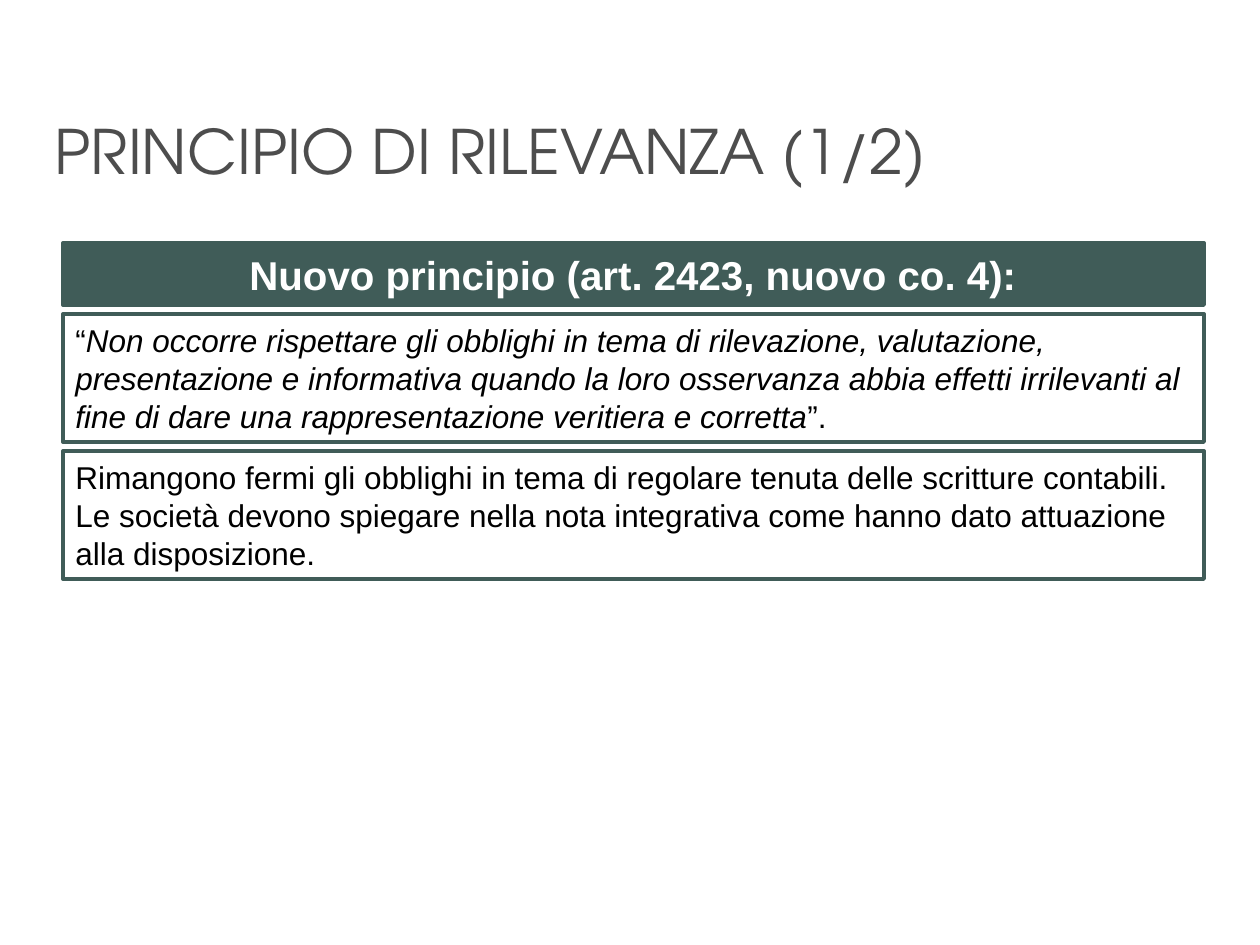
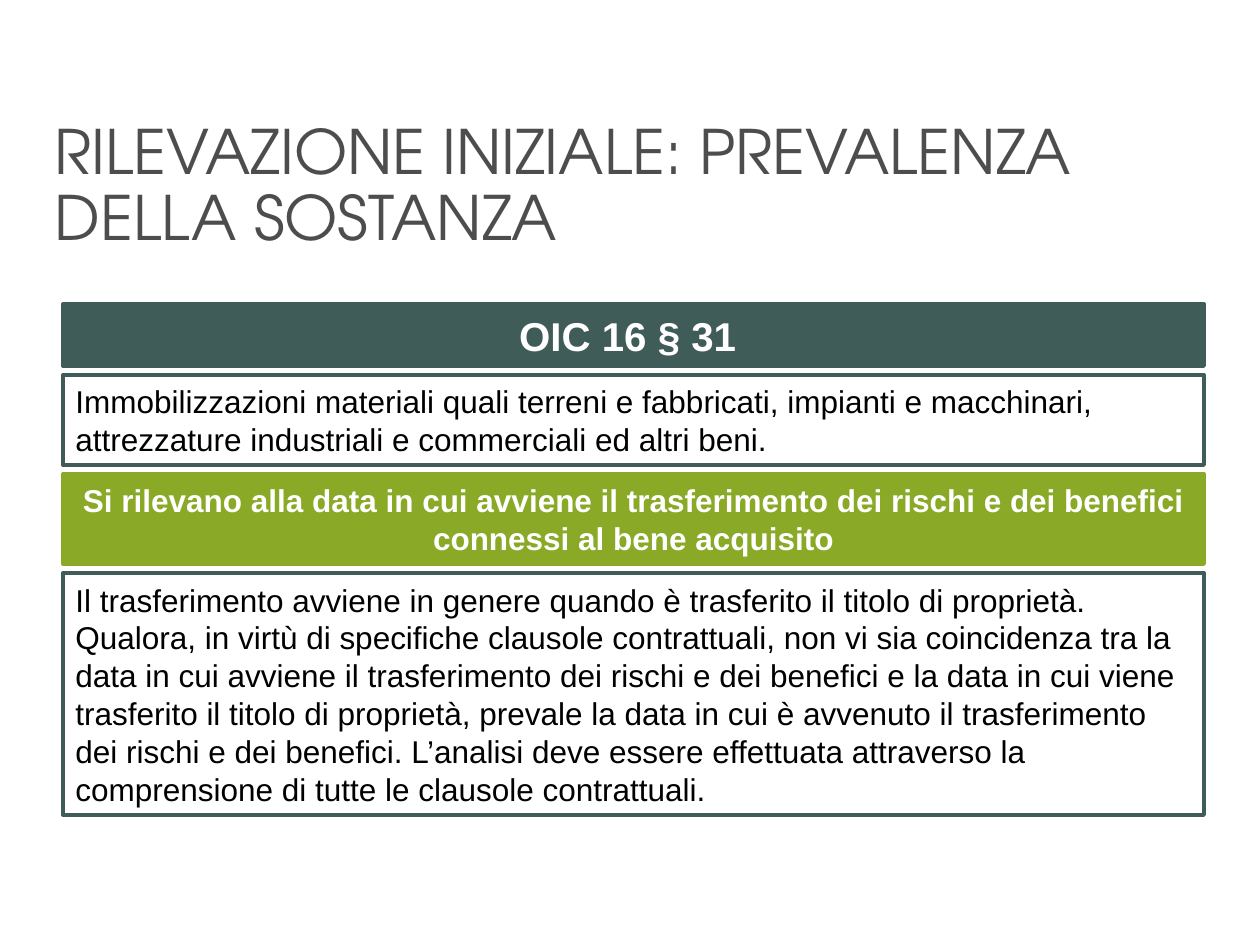
"""Build two slides on accounting principles with stacked text boxes."""
import pptx
import pptx.dml.color
import pptx.enum.shapes
import pptx.enum.text
import pptx.util

RGBColor = pptx.dml.color.RGBColor
TEAL = RGBColor(0x40, 0x5C, 0x58)
GREEN = RGBColor(0x89, 0xA9, 0x27)
GREY = RGBColor(0x4D, 0x4D, 0x4D)
WHITE = RGBColor(0xFF, 0xFF, 0xFF)
BLACK = RGBColor(0x00, 0x00, 0x00)

EMU_PER_PX = 914400 // 126
LEFT, WIDTH, GAP = 63, 1141, 9
PADDING, LINE_HEIGHT = 14, 38
TITLE_LAYOUT = 5


def px(length):
    return pptx.util.Emu(length * EMU_PER_PX)


class SlideBuilder:
    title_font = "TeX Gyre Adventor"
    body_font = "Arial"

    def __init__(self, deck):
        self.deck = deck
        self.page = None
        self.top = 0

    def set_font(self, para, name, size, color, bold=False):
        para.font.name = name
        para.font.size = pptx.util.Pt(size)
        para.font.color.rgb = color
        para.font.bold = bold

    def start(self, title, top):
        self.page = self.deck.slides.add_slide(self.deck.slide_layouts[TITLE_LAYOUT])
        self.top = top
        box = self.page.shapes.title
        box.left, box.top, box.width, box.height = px(42), px(115), px(1187), px(227)
        frame = box.text_frame
        frame.text = title
        frame.word_wrap = True
        frame.auto_size = pptx.enum.text.MSO_AUTO_SIZE.NONE
        frame.vertical_anchor = pptx.enum.text.MSO_ANCHOR.TOP
        para = frame.paragraphs[0]
        para.alignment = pptx.enum.text.PP_ALIGN.LEFT
        para.line_spacing = 0.9
        self.set_font(para, self.title_font, 35, GREY)

    def box(self, height, color, filled):
        shape = self.page.shapes.add_shape(
            pptx.enum.shapes.MSO_SHAPE.RECTANGLE, px(LEFT), px(self.top), px(WIDTH), px(height))
        self.top += height + GAP
        shape.shadow.inherit = False
        if filled:
            shape.fill.solid()
            shape.fill.fore_color.rgb = color
        else:
            shape.fill.background()
        shape.line.color.rgb = color
        shape.line.width = pptx.util.Pt(2.25)
        shape.text_frame.word_wrap = True
        shape.text_frame.vertical_anchor = pptx.enum.text.MSO_ANCHOR.MIDDLE
        return shape.text_frame

    def band(self, text, height=62, size=23, color=TEAL):
        frame = self.box(height, color, True)
        frame.text = text
        para = frame.paragraphs[0]
        para.alignment = pptx.enum.text.PP_ALIGN.CENTER
        self.set_font(para, self.body_font, size, WHITE, bold=True)

    def panel(self, lines, *paragraphs):
        frame = self.box(PADDING + lines * LINE_HEIGHT, TEAL, False)
        for index, spans in enumerate(paragraphs):
            para = frame.add_paragraph() if index else frame.paragraphs[0]
            para.alignment = pptx.enum.text.PP_ALIGN.LEFT
            para.line_spacing = pptx.util.Pt(21.6)
            self.set_font(para, self.body_font, 18, BLACK)
            for text, italic in spans:
                span = para.add_run()
                span.text = text
                span.font.italic = italic


def plain(text):
    return [(text, False)]


def main():
    deck = pptx.Presentation()
    deck.slide_width, deck.slide_height = px(1260), px(945)
    builder = SlideBuilder(deck)

    builder.start("PRINCIPIO DI RILEVANZA (1/2)", 243)
    builder.band("Nuovo principio (art. 2423, nuovo co. 4):")
    builder.panel(3, [
        ("“", False),
        ("Non occorre rispettare gli obblighi in tema di rilevazione, valutazione, "
         "presentazione e informativa quando la loro osservanza abbia effetti irrilevanti "
         "al fine di dare una rappresentazione veritiera e corretta", True),
        ("”.", False)])
    builder.panel(
        3,
        plain("Rimangono fermi gli obblighi in tema di regolare tenuta delle scritture contabili."),
        plain("Le società devono spiegare nella nota integrativa come hanno dato attuazione "
              "alla disposizione."))

    builder.start("RILEVAZIONE INIZIALE: PREVALENZA DELLA SOSTANZA", 304)
    builder.band("OIC 16 § 31 ")
    builder.panel(2, plain(
        "Immobilizzazioni materiali quali terreni e fabbricati, impianti e macchinari, "
        "attrezzature industriali e commerciali ed altri beni."))
    builder.band("Si rilevano alla data in cui avviene il trasferimento dei rischi e dei benefici "
                 "connessi al bene acquisito", PADDING + 2 * LINE_HEIGHT, 18, GREEN)
    builder.panel(6, plain(
        "Il trasferimento avviene in genere quando è trasferito il titolo di proprietà. "
        "Qualora, in virtù di specifiche clausole contrattuali, non vi sia coincidenza tra la "
        "data in cui avviene il trasferimento dei rischi e dei benefici e la data in cui viene "
        "trasferito il titolo di proprietà, prevale la data in cui è avvenuto il trasferimento "
        "dei rischi e dei benefici. L’analisi deve essere effettuata attraverso la "
        "comprensione di tutte le clausole contrattuali."))

    deck.save("out.pptx")


if __name__ == "__main__":
    main()
